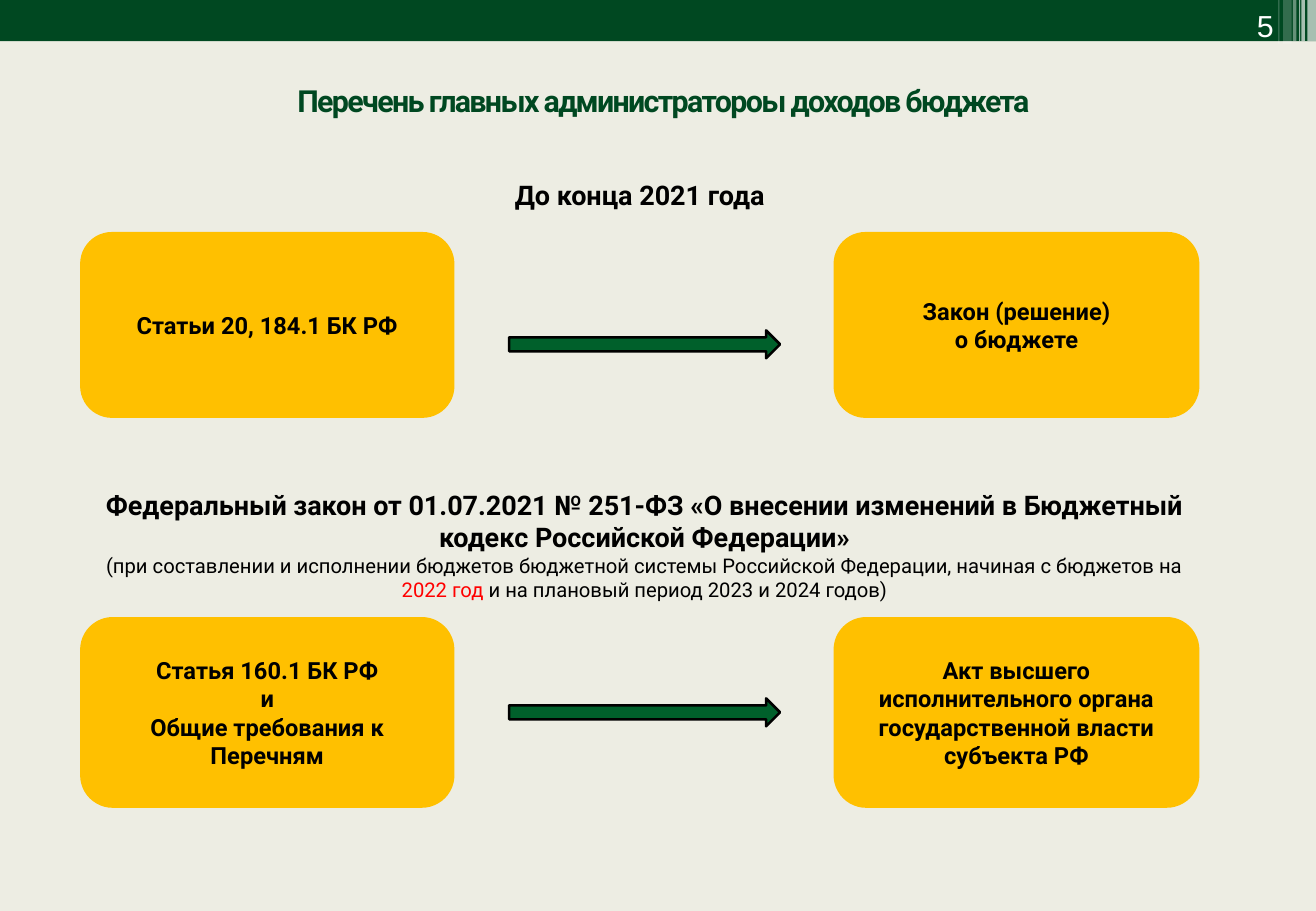
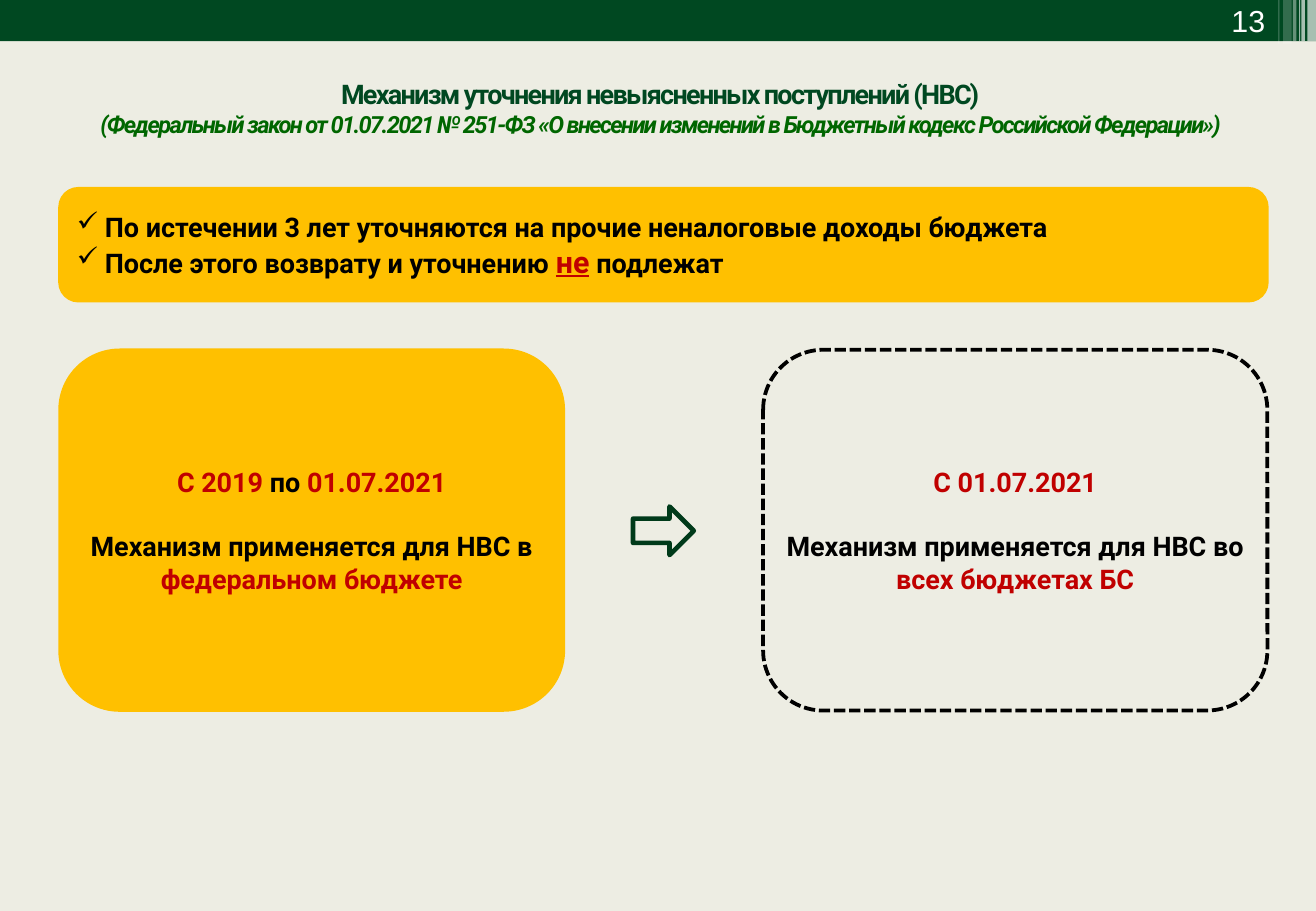
"""Build two slides on budget revenue administration."""
from dataclasses import dataclass

from lxml import etree
from pptx import Presentation
from pptx import util as u
from pptx.dml.color import RGBColor
from pptx.enum import dml, shapes, text
from pptx.oxml import ns

EMU_PER_PX = 9144
ROUND = shapes.MSO_SHAPE.ROUNDED_RECTANGLE
ARROW = shapes.MSO_SHAPE.RIGHT_ARROW
RECT = shapes.MSO_SHAPE.RECTANGLE
CENTER, LEFT, RIGHT = text.PP_ALIGN.CENTER, text.PP_ALIGN.LEFT, text.PP_ALIGN.RIGHT
TOP, MIDDLE = text.MSO_ANCHOR.TOP, text.MSO_ANCHOR.MIDDLE


@dataclass(frozen=True)
class Theme:
    """Colours, fonts and type sizes of the deck."""
    page: str = "EDEDE3"
    band: str = "004821"
    white: str = "FFFFFF"
    black: str = "000000"
    panel: str = "FFC000"
    arrow: str = "00602B"
    outline: str = "003A1A"
    subtitle: str = "006600"
    accent: str = "C00000"
    alert: str = "FF0000"
    body_font: str = "Roboto"
    number_font: str = "Arial"
    large: int = 18
    heading: int = 16
    label: int = 14
    note: int = 12


THEME = Theme()
WIDTH, HEIGHT = 1083, 750
STRIPES = ((1076, 7, 34, 65), (1071, 3, 34, 65), (1069, 1, 34, 60),
           (1064, 3, 34, 40), (1056, 7, 36, 20), (1052, 1, 36, 30))


@dataclass(frozen=True)
class Span:
    """A piece of text in one format."""
    text: str
    size: int = THEME.heading
    color: str = THEME.black
    bold: bool = True
    italic: bool = False
    underline: bool = False
    tracking: int = 0
    font: str = THEME.body_font


@dataclass(frozen=True)
class Line:
    """A paragraph made of spans."""
    spans: tuple
    align: int = CENTER
    before: int = 0
    bullet: str = ""


def px(length):
    """Turn px into EMU."""
    return u.Emu(length * EMU_PER_PX)


def line(content, **style):
    """Return a centred paragraph of one span."""
    return Line((Span(content, **style),))


def add_bullet(para, mark, indent=23):
    """Give a paragraph a hanging bullet."""
    props = para._p.get_or_add_pPr()
    props.set("marL", str(px(indent)))
    props.set("indent", str(-px(indent)))
    etree.SubElement(props, ns.qn("a:buChar")).set("char", mark)


def write(frame, lines, anchor=MIDDLE, margin=10):
    """Fill a text frame with formatted paragraphs."""
    frame.word_wrap = True
    frame.vertical_anchor = anchor
    frame.margin_left = frame.margin_right = px(margin)
    frame.margin_top = frame.margin_bottom = px(5)
    for index, item in enumerate(lines):
        para = frame.add_paragraph() if index else frame.paragraphs[0]
        para.alignment = item.align
        para.space_before = u.Pt(item.before)
        if item.bullet:
            add_bullet(para, item.bullet)
        for span in item.spans:
            run = para.add_run()
            run.text = span.text
            font = run.font
            font.name, font.size = span.font, u.Pt(span.size)
            font.bold, font.italic, font.underline = span.bold, span.italic, span.underline
            font.color.rgb = RGBColor.from_string(span.color)
            if span.tracking:
                font._element.set("spc", str(span.tracking * 100))


def add_text(slide, area, lines, anchor=TOP):
    """Add a text box."""
    box = slide.shapes.add_textbox(*map(px, area))
    write(box.text_frame, lines, anchor)


def add_box(slide, kind, area, fill=None, border=None, weight=1.5):
    """Add a preset shape without a shadow."""
    box = slide.shapes.add_shape(kind, *map(px, area))
    box.shadow.inherit = False
    if fill:
        box.fill.solid()
        box.fill.fore_color.rgb = RGBColor.from_string(fill)
    else:
        box.fill.background()
    if border:
        box.line.color.rgb = RGBColor.from_string(border)
        box.line.width = u.Pt(weight)
    else:
        box.line.fill.background()
    return box


def add_panel(slide, area, lines, margin=10):
    """Add a yellow rounded panel with text."""
    panel = add_box(slide, ROUND, area, THEME.panel, THEME.panel)
    write(panel.text_frame, lines, margin=margin)


def add_page(deck, number, number_area):
    """Add a slide with the shared background, band and page number."""
    slide = deck.slides.add_slide(deck.slide_layouts[6])
    slide.background.fill.solid()
    slide.background.fill.fore_color.rgb = RGBColor.from_string(THEME.page)
    add_box(slide, RECT, (0, 0, WIDTH, 34), THEME.band)
    for left, width, height, opacity in STRIPES:
        stripe = add_box(slide, RECT, (left, 0, width, height), THEME.white)
        color = stripe.fill._xPr.find(".//" + ns.qn("a:srgbClr"))
        etree.SubElement(color, ns.qn("a:alpha")).set("val", str(opacity * 1000))
    digits = Span(number, THEME.large, THEME.white, bold=False, font=THEME.number_font)
    add_text(slide, number_area, [Line((digits,), RIGHT)], MIDDLE)
    return slide


def add_step(slide, top, height, arrow_top, source, result):
    """Add a row of two panels joined by a block arrow."""
    for left, width, words in ((67, 306, source), (687, 299, result)):
        add_panel(slide, (left, top, width, height),
                  [line(item, size=THEME.label) for item in words])
    add_box(slide, ARROW, (419, arrow_top, 223, 23), THEME.arrow, THEME.black)


def build_administrators(deck):
    """Build the slide on the list of revenue administrators."""
    slide = add_page(deck, "5", (968, 1, 90, 40))
    add_text(slide, (33, 63, 1026, 40), [
        line("Перечень главных администратороы доходов бюджета",
             size=THEME.large, color=THEME.band, tracking=-1)])
    add_text(slide, (67, 142, 919, 37), [line("До конца 2021 года")])
    add_step(slide, 192, 151, 272, ["Статьи 20, 184.1 БК РФ"],
             ["Закон (решение)", "о бюджете"])
    add_text(slide, (71, 397, 919, 105), [
        line("Федеральный закон от 01.07.2021 № 251-ФЗ «О внесении изменений "
             "в Бюджетный кодекс Российской Федерации»"),
        Line((Span("(при составлении и исполнении бюджетов бюджетной системы Российской "
                   "Федерации, начиная с бюджетов на ", THEME.note, bold=False),
              Span("2022 год ", THEME.note, THEME.alert, bold=False),
              Span("и на плановый период 2023 и 2024 годов)", THEME.note, bold=False)))])
    add_step(slide, 509, 155, 575,
             ["Статья 160.1 БК РФ", "и", "Общие требования к Перечням"],
             ["Акт высшего исполнительного органа государственной власти субъекта РФ"])


def build_clarification(deck):
    """Build the slide on clarifying unidentified receipts."""
    slide = add_page(deck, "13", (968, -3, 83, 40))
    add_text(slide, (27, 59, 1033, 81), [
        line("Механизм уточнения невыясненных поступлений (НВС)",
             color=THEME.band, tracking=-1),
        line("(Федеральный закон от 01.07.2021 № 251-ФЗ «О внесении изменений "
             "в Бюджетный кодекс Российской Федерации»)",
             size=THEME.label, color=THEME.subtitle, italic=True, tracking=-1)])
    rules = ((Span("По истечении 3 лет уточняются на прочие неналоговые доходы бюджета"),),
             (Span("После этого возврату и уточнению "),
              Span("не", THEME.large, THEME.accent, underline=True),
              Span(" подлежат")))
    add_panel(slide, (49, 155, 994, 93),
              [Line(spans, LEFT, bullet="✓") for spans in rules])
    gap = 19
    add_panel(slide, (49, 288, 415, 297), [
        Line((Span("С 2019 ", color=THEME.accent), Span("по "),
              Span("01.07.2021", color=THEME.accent))),
        Line((Span("Механизм применяется для НВС в "),
              Span("федеральном бюджете", color=THEME.accent)), before=gap)], margin=0)
    add_box(slide, ARROW, (521, 417, 50, 40), border=THEME.outline, weight=2.75)
    frame = add_box(slide, ROUND, (628, 288, 415, 297), border=THEME.black, weight=2.25)
    frame.line.dash_style = dml.MSO_LINE.SQUARE_DOT
    write(frame.text_frame, [
        line("С 01.07.2021", color=THEME.accent),
        Line((Span("Механизм применяется для НВС во"),), before=gap),
        line("всех бюджетах БС", color=THEME.accent)], margin=0)


def main():
    """Build and save the deck."""
    deck = Presentation()
    deck.slide_width, deck.slide_height = px(WIDTH), px(HEIGHT)
    build_administrators(deck)
    build_clarification(deck)
    deck.save("out.pptx")


if __name__ == "__main__":
    main()
